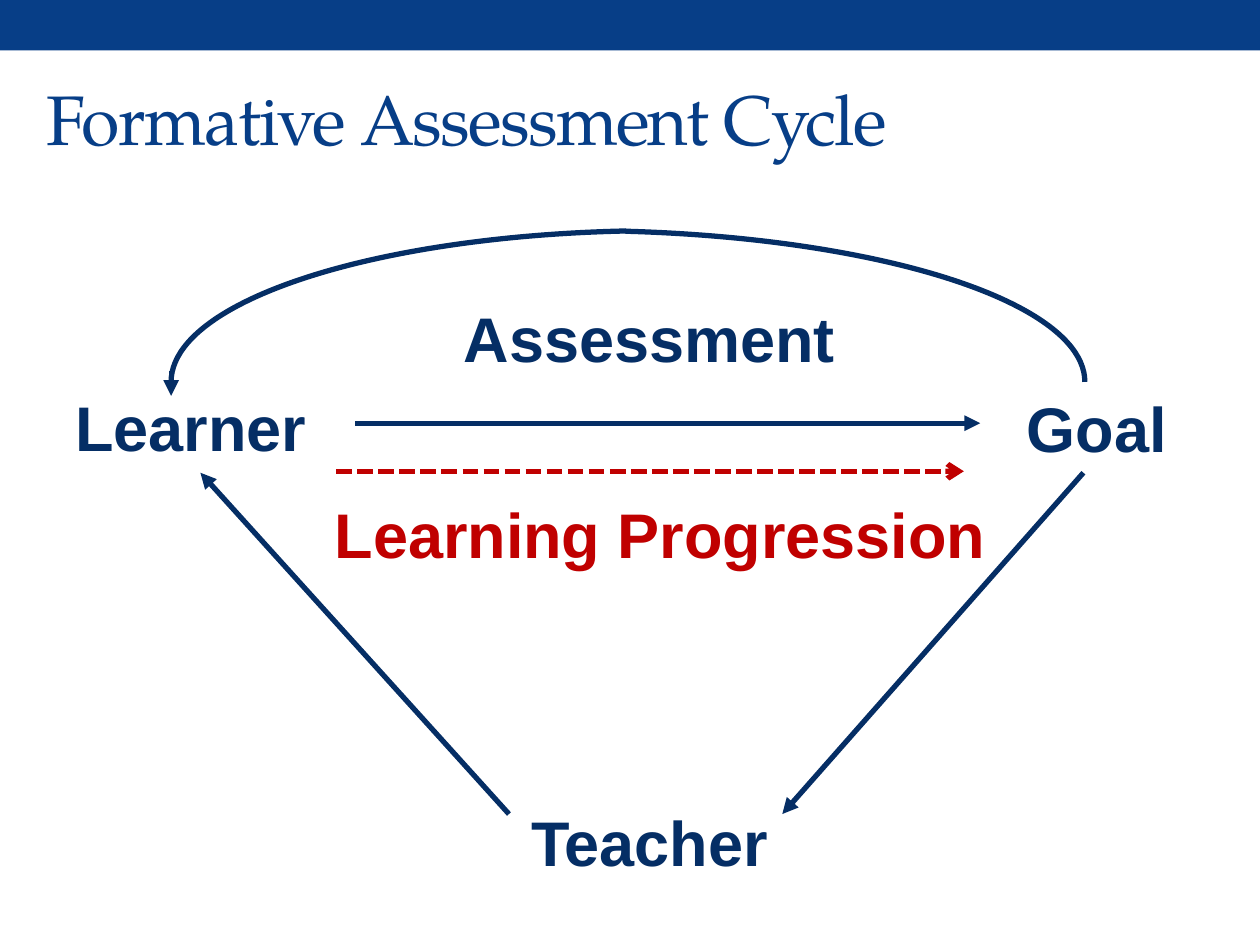
import pptx
import pptx.dml.color
import pptx.enum.dml
import pptx.enum.shapes
import pptx.enum.text
import pptx.oxml.ns
import pptx.util
from pptx.util import Cm

BLUE = pptx.dml.color.RGBColor(0x07, 0x3E, 0x87)
NAVY = pptx.dml.color.RGBColor(0x05, 0x2E, 0x65)
RED = pptx.dml.color.RGBColor(0xC0, 0x00, 0x00)
SHAPES = pptx.enum.shapes.MSO_SHAPE
ALIGN = pptx.enum.text.PP_ALIGN
ANCHOR = pptx.enum.text.MSO_ANCHOR
LABEL_HEIGHT = 1.8
ARC_TOP, ARC_HEIGHT = 4.65, 6.1


def add_child(parent, tag, **attributes):
    """Append a DrawingML element with the given attributes."""
    child = parent.makeelement(pptx.oxml.ns.qn(tag), attributes)
    parent.append(child)


def add_text(page, text, left, top, width, height=LABEL_HEIGHT, *, size=36,
             font="Arial", color=NAVY, bold=True, align=ALIGN.LEFT,
             anchor=ANCHOR.TOP, spacing=None):
    """Add a one-line text box with its format."""
    box = page.shapes.add_textbox(Cm(left), Cm(top), Cm(width), Cm(height))
    frame = box.text_frame
    frame.word_wrap = True
    frame.vertical_anchor = anchor
    para = frame.paragraphs[0]
    para.alignment = align
    span = para.add_run()
    span.text = text
    span.font.size = pptx.util.Pt(size)
    span.font.name = font
    span.font.bold = bold
    span.font.color.rgb = color
    if spacing is not None:
        span.font._element.set("spc", str(spacing))


def style_line(line, color):
    """Give a line the weight shared by the whole diagram."""
    line.color.rgb = color
    line.width = pptx.util.Pt(3)


def add_arrow(page, start, end, color=NAVY, head="triangle", dash=None):
    """Add a straight arrow pointing from start to end."""
    arrow = page.shapes.add_connector(
        pptx.enum.shapes.MSO_CONNECTOR.STRAIGHT,
        *(Cm(value) for value in start + end))
    style_line(arrow.line, color)
    if dash is not None:
        arrow.line.dash_style = dash
    add_child(arrow.line._get_or_add_ln(), "a:tailEnd", type=head)
    add_child(arrow._element.spPr, "a:effectLst")


def add_arc(page, left, width, start_angle, flipped=False):
    """Add one half of the arch from Goal back to Learner."""
    arc = page.shapes.add_shape(
        SHAPES.ARC, Cm(left), Cm(ARC_TOP), Cm(width), Cm(ARC_HEIGHT))
    arc.adjustments[0] = start_angle
    arc.adjustments[1] = 0
    arc.shadow.inherit = False
    arc.fill.background()
    style_line(arc.line, NAVY)
    if flipped:
        arc._element.spPr.xfrm.set("flipH", "1")


def add_banner(page, width):
    """Add the coloured band along the top edge."""
    banner = page.shapes.add_shape(SHAPES.RECTANGLE, 0, 0, width, Cm(1.02))
    banner.shadow.inherit = False
    banner.fill.solid()
    banner.fill.fore_color.rgb = BLUE
    banner.line.fill.background()


def main():
    """Build the formative assessment cycle slide."""
    deck = pptx.Presentation()
    deck.slide_width, deck.slide_height = Cm(25.4), Cm(19.05)
    page = deck.slides.add_slide(deck.slide_layouts[6])

    add_banner(page, deck.slide_width)
    add_text(page, "Formative Assessment Cycle", 0.69, 0.99, 22.86, 2.74,
             size=40, font="TeX Gyre Pagella", color=BLUE, bold=False,
             anchor=ANCHOR.MIDDLE, spacing=-100)

    add_text(page, "Learner", 1.27, 7.7, 5.82)
    add_text(page, "Goal", 20.45, 7.72, 3.73)
    add_text(page, "Assessment", 8.2, 5.92, 9.78, align=ALIGN.CENTER)
    add_text(page, "Learning Progression", 6.2, 9.86, 14.22,
             color=RED, align=ALIGN.CENTER)
    add_text(page, "Teacher", 9.83, 16.08, 6.53, align=ALIGN.CENTER)

    add_arrow(page, (7.16, 8.53), (19.76, 8.53))
    add_arrow(page, (6.78, 9.5), (19.43, 9.5), color=RED, head="arrow",
              dash=pptx.enum.dml.MSO_LINE.SQUARE_DOT)
    add_arrow(page, (21.84, 9.53), (15.77, 16.41))
    add_arrow(page, (10.26, 16.41), (4.04, 9.53))

    add_arc(page, 1.47, 20.4, 172.3)
    add_arc(page, 3.45, 19.71, 169.58, flipped=True)
    add_arrow(page, (3.45, 7.47), (3.45, 7.98))

    deck.save("out.pptx")


if __name__ == "__main__":
    main()
